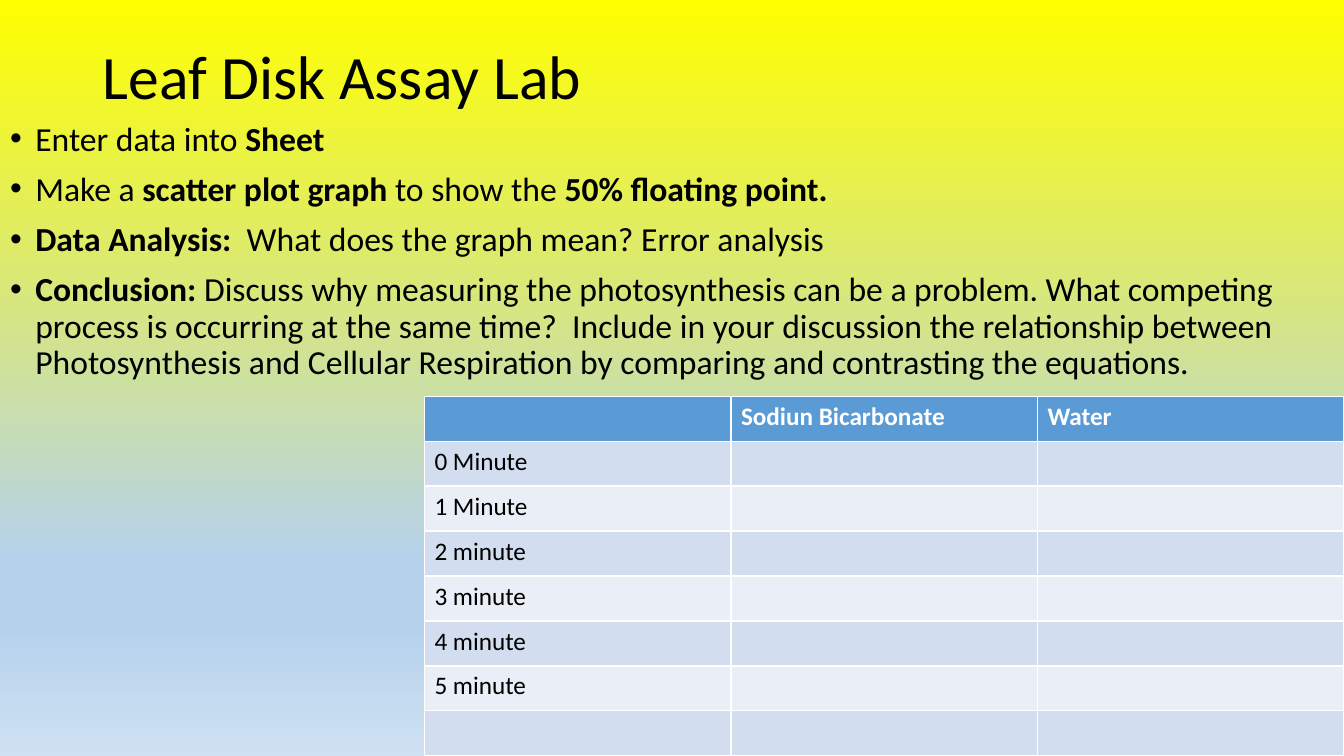
from lxml import etree
from pptx import Presentation
from pptx.dml.color import RGBColor
from pptx.enum.text import MSO_ANCHOR, MSO_AUTO_SIZE, PP_ALIGN
from pptx.oxml.ns import qn
from pptx.util import Inches, Pt

TITLE = "Leaf Disk Assay Lab"
BULLETS = [
    [("Enter data into ", False), ("Sheet", True)],
    [("Make a ", False), ("scatter plot graph ", True),
     ("to show the ", False), ("50% floating point.", True)],
    [("Data Analysis:  ", True),
     ("What does the graph mean? Error analysis", False)],
    [("Conclusion: ", True),
     ("Discuss why measuring the photosynthesis can be a problem. "
      "What competing process is occurring at the same time?  "
      "Include in your discussion the relationship between Photosynthesis "
      "and Cellular Respiration by comparing and contrasting the equations.", False)],
]
HEADERS = ["", "Sodiun Bicarbonate", "Water"]
TIMES = ["0 Minute", "1 Minute", "2 minute", "3 minute", "4 minute", "5 minute", ""]

FONT = "Calibri"
BLACK = RGBColor(0x00, 0x00, 0x00)
WHITE = RGBColor(0xFF, 0xFF, 0xFF)
HEADER_BLUE = RGBColor(0x5B, 0x9B, 0xD5)
BANDS = [RGBColor(0xD2, 0xDE, 0xEF), RGBColor(0xEA, 0xEF, 0xF7)]
YELLOW = RGBColor(0xFF, 0xFF, 0x00)
SKY = RGBColor(0xB5, 0xD2, 0xEC)
PALE_SKY = RGBColor(0xCE, 0xE1, 0xF2)
GRADIENT = [(0, YELLOW), (74, SKY), (83, SKY), (100, PALE_SKY)]

LEFT = PP_ALIGN.LEFT
TOP, MIDDLE = MSO_ANCHOR.TOP, MSO_ANCHOR.MIDDLE
NO_AUTOFIT = MSO_AUTO_SIZE.NONE


def place(sp, left, top, width, height):
    sp.left, sp.top = Inches(left), Inches(top)
    sp.width, sp.height = Inches(width), Inches(height)


def style(r, size, color, bold=False):
    r.font.name = FONT
    r.font.size = Pt(size)
    r.font.bold = bold
    r.font.color.rgb = color


def paint_background(s):
    fill = s.background.fill
    fill.gradient()
    fill.gradient_angle = 270
    stops = s.element.find(".//" + qn("a:gsLst"))
    for stop in list(stops):
        stops.remove(stop)
    for percent, color in GRADIENT:
        stop = etree.SubElement(stops, qn("a:gs"), pos=str(percent * 1000))
        etree.SubElement(stop, qn("a:srgbClr"), val=str(color))


def add_title(s):
    sp = s.shapes.title
    place(sp, 0.92, 0.4, 11.5, 1.45)
    tf = sp.text_frame
    tf.text = TITLE
    tf.auto_size = NO_AUTOFIT
    tf.vertical_anchor = MIDDLE
    tf.margin_bottom = Inches(0.72)
    p = tf.paragraphs[0]
    p.alignment = LEFT
    p.line_spacing = 0.9
    style(p.runs[0], 44, BLACK)


def add_bullets(s):
    sp = s.placeholders[1]
    place(sp, 0, 1.16, 13.33, 5.59)
    tf = sp.text_frame
    tf.auto_size = NO_AUTOFIT
    tf.vertical_anchor = TOP
    for i, runs in enumerate(BULLETS):
        p = tf.add_paragraph() if i else tf.paragraphs[0]
        p.line_spacing = 0.9
        p.space_before = Pt(10)
        pPr = p._p.get_or_add_pPr()
        pPr.set("marL", str(Inches(0.25)))
        pPr.set("indent", str(-Inches(0.25)))
        etree.SubElement(pPr, qn("a:buChar"), char="•")
        for text, bold in runs:
            r = p.add_run()
            r.text = text
            style(r, 24, BLACK, bold)


def add_data_table(s):
    rows = [HEADERS] + [[time, "", ""] for time in TIMES]
    table = s.shapes.add_table(len(rows), len(HEADERS), Inches(4.21), Inches(3.93),
                               Inches(9.12), Inches(3.57)).table
    for i, row in enumerate(rows):
        header = i == 0
        for j, text in enumerate(row):
            cell = table.cell(i, j)
            cell.fill.solid()
            cell.fill.fore_color.rgb = HEADER_BLUE if header else BANDS[(i - 1) % 2]
            if text:
                cell.text_frame.text = text
                style(cell.text_frame.paragraphs[0].runs[0], 18,
                      WHITE if header else BLACK, header)


def main():
    prs = Presentation()
    prs.slide_width, prs.slide_height = Inches(13.33), Inches(7.5)
    s = prs.slides.add_slide(prs.slide_layouts[1])
    paint_background(s)
    add_title(s)
    add_bullets(s)
    add_data_table(s)
    prs.save("out.pptx")


if __name__ == "__main__":
    """Build the leaf disk assay lab slide."""
    main()
